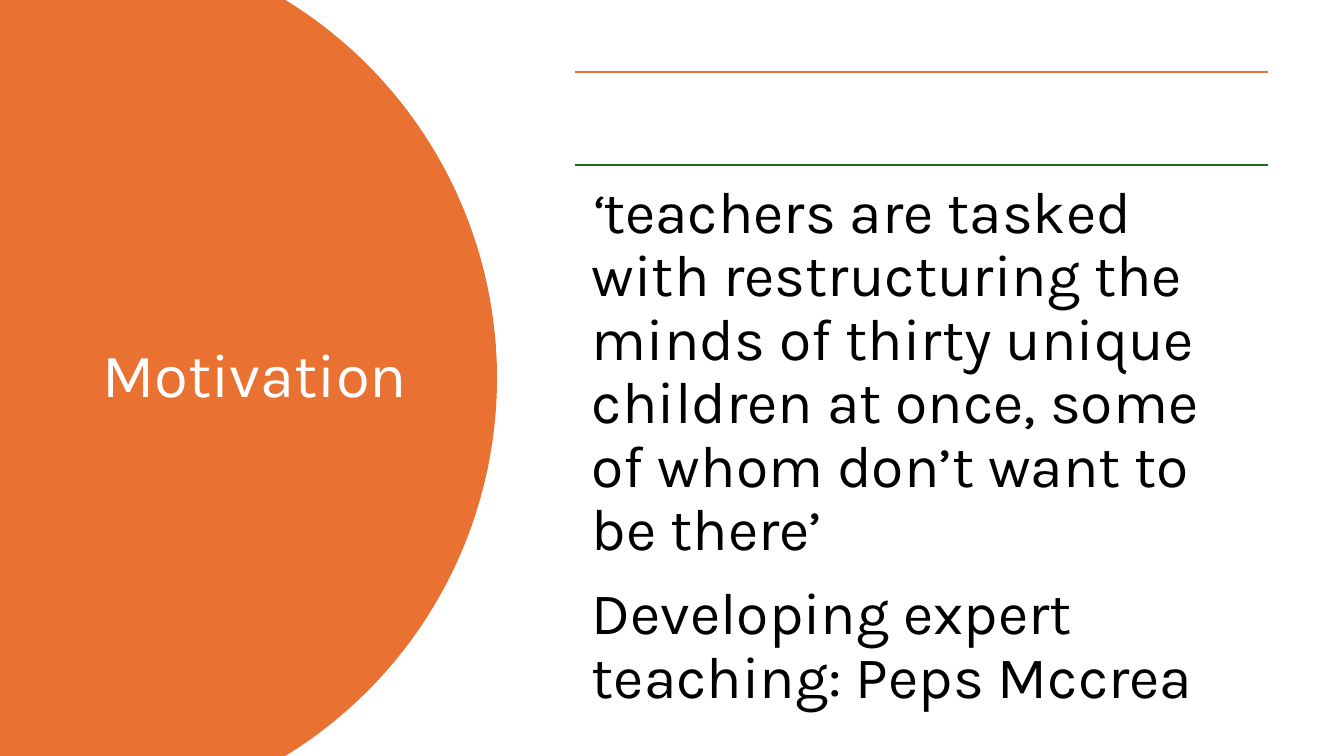
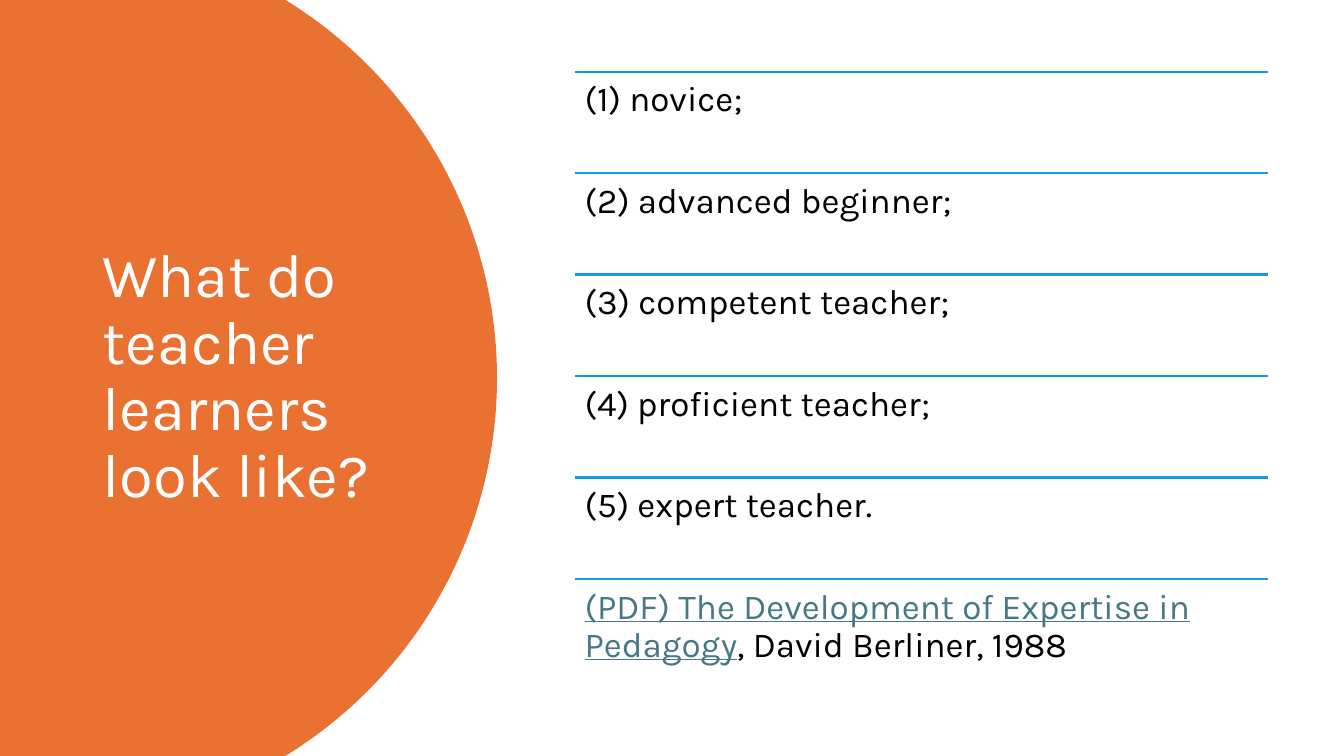
from dataclasses import dataclass
from math import asin, cos, sin

from lxml.etree import SubElement
from pptx import Presentation
from pptx.dml.color import RGBColor
from pptx.enum.shapes import MSO_CONNECTOR
from pptx.enum.text import MSO_ANCHOR
from pptx.oxml.ns import qn
from pptx.util import Inches, Pt

WIDTH, HEIGHT = Inches(13.33), Inches(7.5)


@dataclass(frozen=True)
class Theme:
    """Colours, font, type sizes and line width of the deck."""
    font: str = "Karla"
    orange: str = "E97132"
    green: str = "196B24"
    blue: str = "0F9ED5"
    link: str = "467886"
    text: str = "000000"
    light: str = "FFFFFF"
    title_size: int = 44
    quote_size: int = 42
    list_size: int = 25
    rule_width: float = 1.5
    line_spacing: float = 0.9
    gap_share: float = 0.35


@dataclass(frozen=True)
class Grid:
    """Positions as percentages of the slide's width or height."""
    title_left: float = 6.9
    title_top: float = 9.33
    title_width: float = 24.23
    title_height: float = 81.2
    disc_centre: float = 3.98
    disc_right: float = 36.98
    content_left: float = 42.76
    content_width: float = 51.61
    content_top: float = 9.47
    content_bottom: float = 90
    quote_top: float = 21.87


THEME, GRID = Theme(), Grid()


def across(percent):
    """Return a share of the slide's width."""
    return int(WIDTH * percent / 100)


def down(percent):
    """Return a share of the slide's height."""
    return int(HEIGHT * percent / 100)


def add_text(page, paragraphs, left, top, width, height, *, size,
             color=THEME.text, inset=None, anchor=MSO_ANCHOR.TOP):
    """Add paragraphs, each a list of (text, format overrides) spans."""
    box = page.shapes.add_textbox(across(left), down(top), across(width), down(height))
    frame = box.text_frame
    frame.word_wrap = True
    frame.vertical_anchor = anchor
    if inset is not None:
        frame.margin_left = frame.margin_right = Inches(inset)
        frame.margin_top = frame.margin_bottom = Inches(inset)
    for index, spans in enumerate(paragraphs):
        para = frame.add_paragraph() if index else frame.paragraphs[0]
        para.line_spacing = THEME.line_spacing
        para.space_after = Pt(size * THEME.gap_share)
        for text, style in spans:
            span = para.add_run()
            span.text = text
            span.font.name = THEME.font
            span.font.size = Pt(size)
            span.font.italic = style.get("italic")
            span.font.underline = style.get("underline")
            span.font.color.rgb = RGBColor.from_string(style.get("color", color))


def add_rule(page, top, color):
    """Draw a horizontal rule across the content column."""
    left, right = GRID.content_left, GRID.content_left + GRID.content_width
    rule = page.shapes.add_connector(
        MSO_CONNECTOR.STRAIGHT, across(left), down(top), across(right), down(top))
    rule.line.color.rgb = RGBColor.from_string(color)
    rule.line.width = Pt(THEME.rule_width)
    SubElement(rule.line._get_or_add_ln().getparent(), qn("a:effectLst"))


def add_disc(page, steps=120):
    """Fill the left side with a disc cut off by the slide's edges."""
    centre, middle = across(GRID.disc_centre), HEIGHT / 2
    radius = across(GRID.disc_right) - centre
    reach = asin(middle / radius)
    angles = [reach * (2 * step / steps - 1) for step in range(steps + 1)]
    arc = [(round(centre + radius * cos(angle)), round(middle + radius * sin(angle)))
           for angle in angles]
    outline = page.shapes.build_freeform(0, 0, scale=1.0)
    outline.add_line_segments(arc + [(0, HEIGHT)], close=True)
    disc = outline.convert_to_shape()
    disc.shadow.inherit = False
    disc.fill.solid()
    disc.fill.fore_color.rgb = RGBColor.from_string(THEME.orange)
    disc.line.fill.background()


def add_page(deck, title):
    """Add a blank page with the disc and its title."""
    page = deck.slides.add_slide(deck.slide_layouts[6])
    add_disc(page)
    add_text(page, [[(title, {})]], GRID.title_left, GRID.title_top,
             GRID.title_width, GRID.title_height, size=THEME.title_size,
             color=THEME.light, anchor=MSO_ANCHOR.MIDDLE)
    return page


def add_quote(page, paragraphs):
    """Add a quotation below an empty ruled band."""
    add_rule(page, GRID.content_top, THEME.orange)
    add_rule(page, GRID.quote_top, THEME.green)
    add_text(page, paragraphs, GRID.content_left, GRID.quote_top, GRID.content_width,
             GRID.content_bottom - GRID.quote_top, size=THEME.quote_size, inset=0.17)


def add_ruled_list(page, rows):
    """Add equal rows, each under a rule."""
    pitch = (GRID.content_bottom - GRID.content_top) / len(rows)
    for index, spans in enumerate(rows):
        top = GRID.content_top + index * pitch
        add_rule(page, top, THEME.blue)
        add_text(page, [spans], GRID.content_left, top, GRID.content_width, pitch,
                 size=THEME.list_size, inset=0.1)


def main():
    """Build and save the deck."""
    deck = Presentation()
    deck.slide_width, deck.slide_height = WIDTH, HEIGHT

    add_quote(add_page(deck, "Motivation"), [
        [("‘", {"italic": True}),
         ("teachers are tasked with restructuring the minds of thirty unique "
          "children at once, some of whom don’t want to be there’", {})],
        [("Developing expert teaching: Peps Mccrea", {})],
    ])

    stages = ["(1) novice;", "(2) advanced beginner;", "(3) competent teacher;",
              "(4) proficient teacher;", "(5) expert teacher."]
    source = [("(PDF) The Development of Expertise in Pedagogy",
               {"color": THEME.link, "underline": True}),
              (", David Berliner, 1988", {})]
    add_ruled_list(add_page(deck, "What do teacher learners look like?"),
                   [[(stage, {})] for stage in stages] + [source])

    deck.save("out.pptx")


if __name__ == "__main__":
    main()
